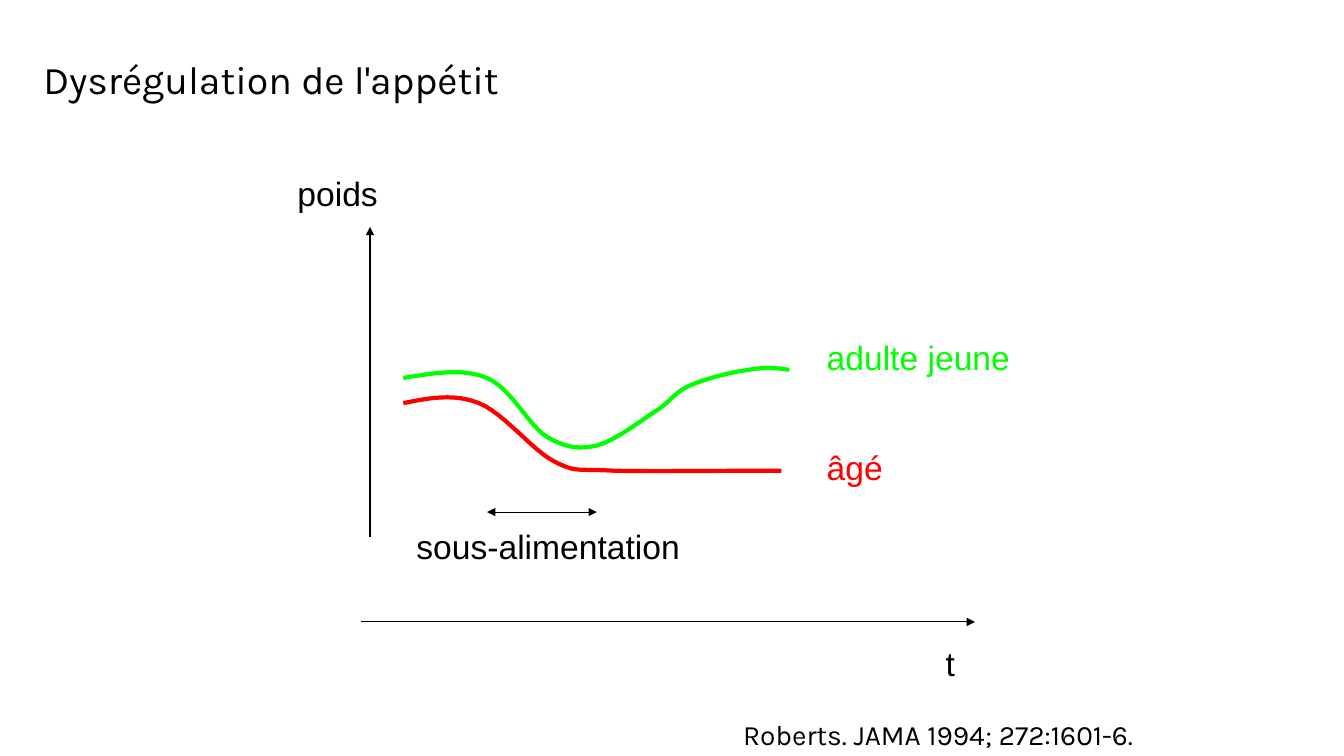
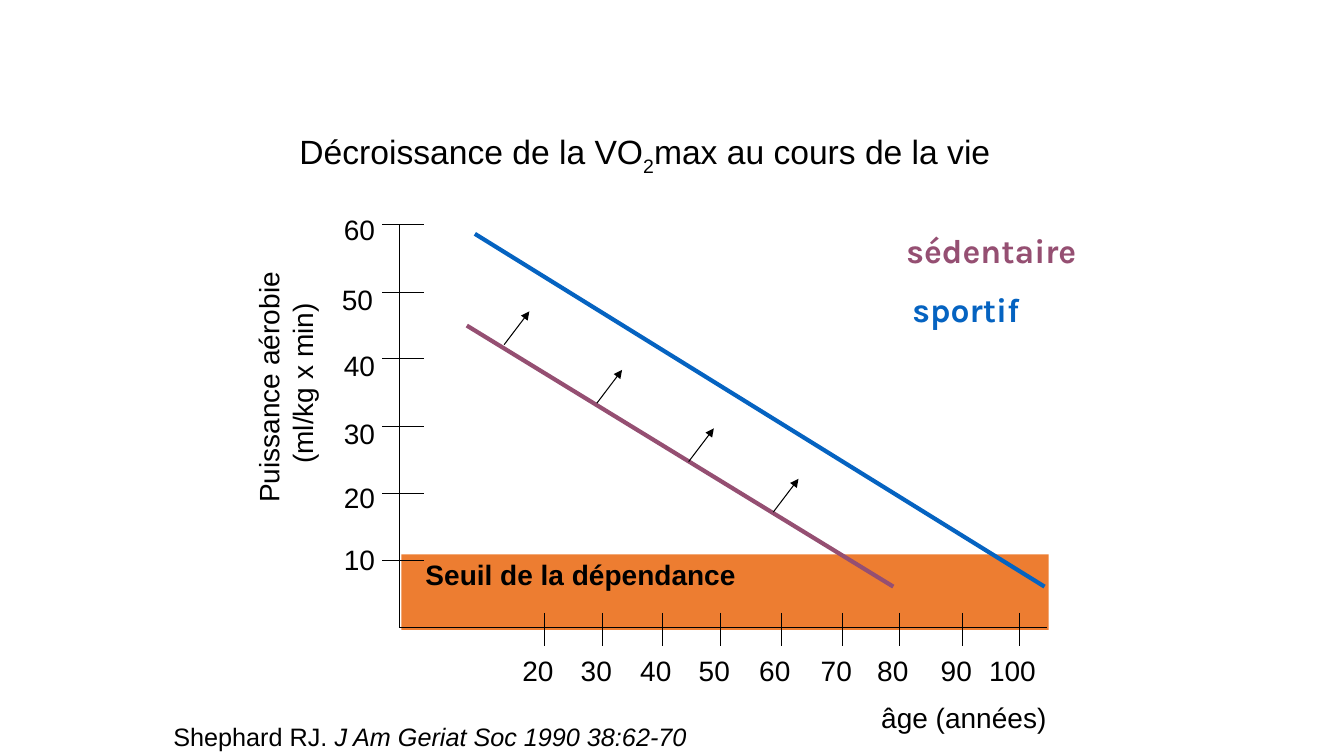
from dataclasses import dataclass

from lxml.etree import SubElement
from pptx import Presentation
from pptx.dml.color import RGBColor
from pptx.enum.shapes import MSO_CONNECTOR, MSO_SHAPE
from pptx.enum.text import MSO_ANCHOR, MSO_AUTO_SIZE, PP_ALIGN
from pptx.oxml.ns import qn
from pptx.util import Pt

SCALE = 9144
WIDE, HIGH = 1333, 750
INSET = 5
STEPS = 12

BLACK = "000000"
GREEN = "00FF00"
RED = "FF0000"
ORANGE = "ED7D31"
PLUM = "954F72"
BLUE = "0563C1"

SANS = "Arial"
KARLA = "Karla"

Point = tuple[int, int]


@dataclass(frozen=True)
class Span:
    text: str
    bold: bool = False
    slant: bool = False
    base: int = 0


@dataclass(frozen=True)
class Label:
    left: int
    top: int
    width: int
    height: int
    lines: tuple[tuple[Span, ...], ...]
    size: int = 24
    face: str = SANS
    ink: str = BLACK
    turn: int = 0
    align: PP_ALIGN = PP_ALIGN.LEFT


@dataclass(frozen=True)
class Line:
    start: Point
    end: Point
    ink: str = BLACK
    weight: float = 0.75
    head: bool = False
    tail: bool = False


@dataclass(frozen=True)
class Curve:
    start: Point
    bends: tuple[tuple[Point, Point, Point], ...]
    ink: str


def px(value: float) -> int:
    return round(value * SCALE)


def paint(text: str) -> RGBColor:
    return RGBColor.from_string(text)


def plain(text: str, **style) -> tuple[tuple[Span, ...], ...]:
    return ((Span(text, **style),),)


def write(shape, label: Label) -> None:
    frame = shape.text_frame
    frame.margin_left = frame.margin_right = px(INSET)
    frame.margin_top = frame.margin_bottom = px(INSET)
    frame.text = "\n".join("".join(s.text for s in row) for row in label.lines)
    for para, row in zip(frame.paragraphs, label.lines):
        para.alignment = label.align
        para.runs[0].text = row[0].text
        for span in row[1:]:
            para.add_run().text = span.text
        for run, span in zip(para.runs, row):
            font = run.font
            font.name = label.face
            font.size = Pt(label.size)
            font.bold = span.bold
            font.italic = span.slant
            font.color.rgb = paint(label.ink)
            if span.base:
                run._r.get_or_add_rPr().set("baseline", str(span.base * 1000))


def place(shape, label: Label) -> None:
    shape.left, shape.top = px(label.left), px(label.top)
    shape.width, shape.height = px(label.width), px(label.height)


def add_text(slide, label: Label) -> None:
    box = slide.shapes.add_textbox(0, 0, 0, 0)
    write(box, label)
    box.text_frame.word_wrap = False
    box.text_frame.auto_size = MSO_AUTO_SIZE.SHAPE_TO_FIT_TEXT
    box.rotation = label.turn
    place(box, label)


def add_slide(deck, title: Label, anchor: MSO_ANCHOR):
    slide = deck.slides.add_slide(deck.slide_layouts[5])
    shape = slide.shapes.title
    place(shape, title)
    write(shape, title)
    frame = shape.text_frame
    frame.vertical_anchor = anchor
    frame.word_wrap = True
    frame.auto_size = MSO_AUTO_SIZE.NONE
    frame.paragraphs[0].line_spacing = 0.9 if anchor == MSO_ANCHOR.MIDDLE else 1.0
    return slide


def add_line(slide, line: Line) -> None:
    shape = slide.shapes.add_connector(
        MSO_CONNECTOR.STRAIGHT, *map(px, line.start + line.end))
    shape.line.color.rgb = paint(line.ink)
    shape.line.width = Pt(line.weight)
    stroke = shape.line._get_or_add_ln()
    for tag, shown in (("a:headEnd", line.head), ("a:tailEnd", line.tail)):
        if shown:
            SubElement(stroke, qn(tag)).set("type", "triangle")
    SubElement(shape._element.spPr, qn("a:effectLst"))


def add_curve(slide, curve: Curve) -> None:
    points = []
    first = curve.start
    for second, third, last in curve.bends:
        for step in range(1, STEPS + 1):
            t = step / STEPS
            u = 1 - t
            points.append(tuple(
                px(u**3 * a + 3 * u * u * t * b + 3 * u * t * t * c + t**3 * d)
                for a, b, c, d in zip(first, second, third, last)))
        first = last
    pen = slide.shapes.build_freeform(*map(px, curve.start))
    pen.add_line_segments(points, close=False)
    shape = pen.convert_to_shape()
    shape.shadow.inherit = False
    shape.fill.background()
    shape.line.color.rgb = paint(curve.ink)
    shape.line.width = Pt(3)


def add_band(slide, left: int, top: int, width: int, height: int, fill: str) -> None:
    band = slide.shapes.add_shape(
        MSO_SHAPE.RECTANGLE, px(left), px(top), px(width), px(height))
    band.shadow.inherit = False
    band.fill.solid()
    band.fill.fore_color.rgb = paint(fill)
    band.line.fill.background()


YOUNG = Curve((400, 375), (
    ((430, 370), (460, 365), (483, 375)),
    ((507, 385), (524, 422), (542, 433)),
    ((560, 444), (574, 446), (592, 442)),
    ((610, 437), (635, 418), (650, 408)),
    ((665, 399), (668, 390), (683, 383)),
    ((699, 376), (725, 369), (742, 367)),
    ((758, 364), (771, 365), (783, 367)),
), GREEN)

OLD = Curve((400, 400), (
    ((425, 395), (450, 390), (475, 400)),
    ((500, 410), (528, 447), (550, 458)),
    ((572, 469), (571, 465), (608, 467)),
    ((646, 468), (710, 467), (775, 467)),
), RED)


def draw_weight(deck) -> None:
    slide = add_slide(
        deck,
        Label(38, 19, 850, 125, plain("Dysrégulation de l'appétit"), 28, KARLA),
        MSO_ANCHOR.MIDDLE)
    for line in (
        Line((367, 533), (367, 225), tail=True),
        Line((358, 617), (967, 617), tail=True),
        Line((483, 508), (592, 508), head=True, tail=True),
    ):
        add_line(slide, line)
    for curve in (YOUNG, OLD):
        add_curve(slide, curve)
    for label in (
        Label(290, 167, 91, 48, plain("poids")),
        Label(933, 633, 21, 48, plain("t")),
        Label(815, 329, 193, 48, plain("adulte jeune"), ink=GREEN),
        Label(815, 438, 67, 48, plain("âgé"), ink=RED),
        Label(408, 517, 273, 48, plain("sous-alimentation")),
        Label(732, 707, 426, 43,
              plain("Roberts. JAMA 1994; 272:1601-6."), 20, KARLA),
    ):
        add_text(slide, label)


def draw_power(deck) -> None:
    title = (Span("Décroissance de la VO"), Span("2", base=-25),
             Span("max au cours de la vie"))
    slide = add_slide(deck, Label(292, 125, 720, 54, (title,)), MSO_ANCHOR.TOP)
    left, base, top = 396, 623, 223
    add_band(slide, 398, 550, 642, 75, ORANGE)
    add_line(slide, Line((left, top), (left, base)))
    add_line(slide, Line((left, base), (1038, base)))

    for rank, high in enumerate((533, 472, 408, 341, 275, 206), 1):
        y = round(base - rank * (base - top) / 6)
        add_line(slide, Line((left - 17, y), (left + 25, y)))
        x = 334 if rank == 5 else 336
        add_text(slide, Label(x, high, 42, 41, plain(str(rank * 10)), 20))

    for rank, x in enumerate((540, 598, 657, 715, 775, 836, 892, 955, 1011), 2):
        add_line(slide, Line((x, base - 15), (x, base + 18)))
        width = 58 if rank == 10 else 42
        add_text(slide, Label(
            x - 6 - width // 2, 643, width, 41, plain(str(rank * 10)), 20))

    add_line(slide, Line((886, 582), (463, 323), PLUM, 3))
    add_line(slide, Line((1036, 582), (471, 232), BLUE, 3))
    for x, y in ((500, 342), (592, 400), (683, 458), (767, 508)):
        add_line(slide, Line((x, y), (x + 25, y - 33), tail=True))

    unit = ((Span("Puissance aérobie "),), (Span("(ml/kg x min)"),))
    source = (Span("Shephard RJ. "),
              Span("J Am Geriat Soc 1990 38:62-70", slant=True))
    for label in (
        Label(869, 690, 175, 41, plain("âge (années)"), 20),
        Label(417, 548, 319, 41,
              plain("Seuil de la dépendance", bold=True), 20),
        Label(152, 344, 258, 73, unit, 20, turn=270, align=PP_ALIGN.CENTER),
        Label(167, 711, 520, 38, (source,), 18),
        Label(894, 223, 189, 50, plain("sédentaire", bold=True), 24, KARLA, PLUM),
        Label(900, 282, 121, 50, plain("sportif", bold=True), 24, KARLA, BLUE),
    ):
        add_text(slide, label)


def main() -> None:
    deck = Presentation()
    deck.slide_width, deck.slide_height = px(WIDE), px(HIGH)
    draw_weight(deck)
    draw_power(deck)
    deck.save("out.pptx")


if __name__ == "__main__":
    main()
